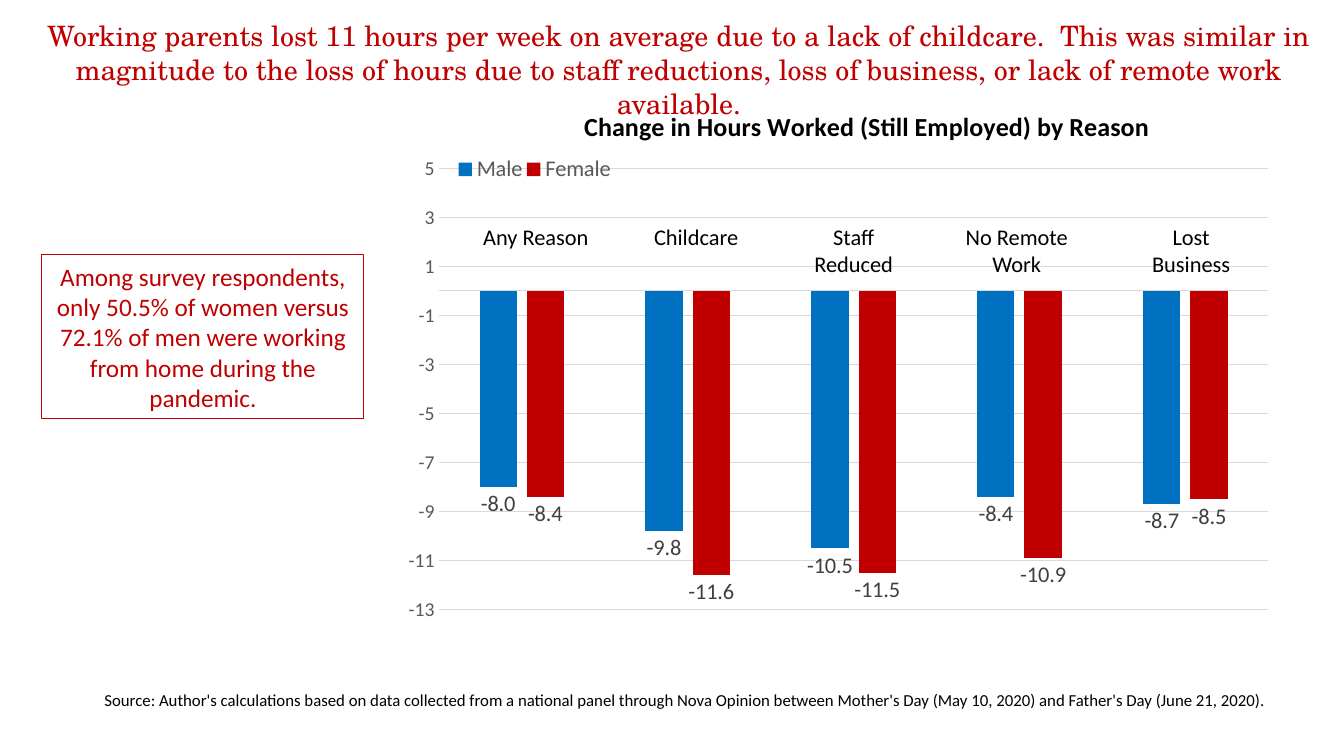
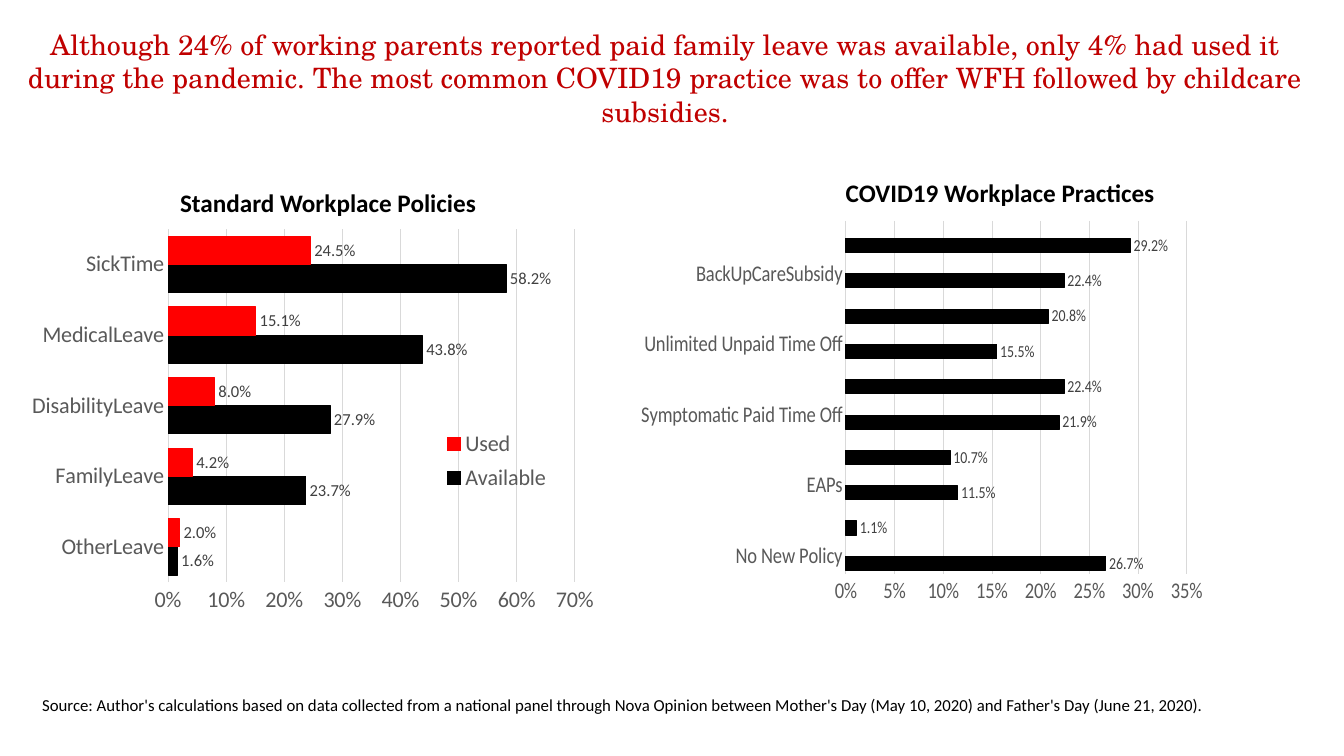
from lxml import etree
from pptx import Presentation
from pptx.chart.data import CategoryChartData
from pptx.dml.color import RGBColor
from pptx.enum.chart import XL_CHART_TYPE as CT, XL_LABEL_POSITION as LP
from pptx.enum.chart import XL_LEGEND_POSITION as LEG, XL_TICK_LABEL_POSITION as TL
from pptx.enum.chart import XL_TICK_MARK as TM
from pptx.enum.shapes import MSO_SHAPE
from pptx.enum.text import MSO_ANCHOR, MSO_AUTO_SIZE, PP_ALIGN
from pptx.oxml.ns import qn
from pptx.util import Pt

COLORS = {"accent": "C00000", "male": "0070C0", "used": "FF0000", "black": "000000",
          "axis": "595959", "label": "404040", "grid": "D9D9D9"}
BODY, HEAD = "Calibri", "TeX Gyre Schola"
SOURCE = ("Source: Author's calculations based on data collected from a national panel "
          "through Nova Opinion between Mother's Day (May 10, 2020) and Father's Day "
          "(June 21, 2020).")
BAR_PLOT = (0.237, 0.1, 0.734, 0.746)


def rgb(name):
    """Return the named colour."""
    return RGBColor.from_string(COLORS[name])


def style(font, size, color, face=BODY, bold=False):
    """Set size, colour, face and weight of a font."""
    font.size, font.name, font.bold = Pt(size), face, bold
    font.color.rgb = rgb(color)


def fill_text(tf, lines, size, color, face=BODY, bold=False, align=PP_ALIGN.CENTER):
    """Write one paragraph per line into a text frame."""
    for i, line in enumerate(lines):
        p = tf.paragraphs[0] if i == 0 else tf.add_paragraph()
        p.alignment = align
        r = p.add_run()
        r.text = line
        style(r.font, size, color, face, bold)


def add_text(s, box, lines, size, color="black", wrap=True, **kw):
    """Add a text box that grows with its text."""
    tf = s.shapes.add_textbox(*map(Pt, box)).text_frame
    tf.word_wrap = wrap
    tf.auto_size = MSO_AUTO_SIZE.SHAPE_TO_FIT_TEXT
    fill_text(tf, lines, size, color, **kw)


def add_frame(s, title_box, title, source_box):
    """Add the headline and the source note."""
    add_text(s, title_box, [title], 20, "accent", face=HEAD)
    add_text(s, source_box, [SOURCE], 12, align=PP_ALIGN.LEFT)


def add_callout(s, box, text):
    """Add an outlined box with centred text."""
    sp = s.shapes.add_shape(MSO_SHAPE.RECTANGLE, *map(Pt, box))
    sp.shadow.inherit = False
    sp.fill.background()
    sp.line.color.rgb, sp.line.width = rgb("accent"), Pt(0.75)
    sp.text_frame.word_wrap = True
    sp.text_frame.vertical_anchor = MSO_ANCHOR.MIDDLE
    fill_text(sp.text_frame, [text], 18, "accent")


def set_layout(el, box, inner=False):
    """Place a chart part by fractions of the chart area."""
    for old in el.findall(qn("c:layout")):
        el.remove(old)
    layout = etree.Element(qn("c:layout"))
    manual = etree.SubElement(layout, qn("c:manualLayout"))
    items = [("layoutTarget", "inner")] if inner else []
    items += [("xMode", "edge"), ("yMode", "edge"), *zip("xywh", box)]
    for tag, val in items:
        etree.SubElement(manual, qn(f"c:{tag}")).set("val", str(val))
    first = [c for c in el if c.tag in (qn("c:tx"), qn("c:legendPos"))]
    el.insert(el.index(first[0]) + 1 if first else 0, layout)


def style_axes(chart, cat_size, val_size, low, high, step, fmt):
    """Style both axes and the value gridlines."""
    cat, val = chart.category_axis, chart.value_axis
    for axis, size in ((cat, cat_size), (val, val_size)):
        axis.major_tick_mark = axis.minor_tick_mark = TM.NONE
        style(axis.tick_labels.font, size, "axis")
    val.minimum_scale, val.maximum_scale, val.major_unit = low, high, step
    val.tick_labels.number_format = fmt
    val.tick_labels.number_format_is_linked = False
    val.format.line.fill.background()
    val.has_major_gridlines = True
    for line in (cat.format.line, val.major_gridlines.format.line):
        line.color.rgb, line.width = rgb("grid"), Pt(0.75)


def style_series(ser, color, size, fmt, outlined):
    """Colour one series and show its values."""
    ser.invert_if_negative = False
    ser.format.fill.solid()
    ser.format.fill.fore_color.rgb = rgb(color)
    if outlined:
        ser.format.line.color.rgb, ser.format.line.width = rgb(color), Pt(0.75)
    labels = ser.data_labels
    labels.show_value, labels.position = True, LP.OUTSIDE_END
    labels.number_format, labels.number_format_is_linked = fmt, False
    style(labels.font, size, "label")


def add_bars(s, box, kind, cats, series, plot, gap, overlap, label, axes, legend=None):
    """Add a clustered chart; series holds name, colour and values."""
    data = CategoryChartData()
    data.categories = cats
    for name, _, vals in series:
        data.add_series(name, vals)
    chart = s.shapes.add_chart(kind, *map(Pt, box), data).chart
    style(chart.font, 10, "black")
    chart.has_title = False
    bars = chart.plots[0]
    bars.gap_width, bars.overlap, bars.vary_by_categories = gap, overlap, False
    for ser, (_, color, _) in zip(bars.series, series):
        style_series(ser, color, *label, outlined=kind == CT.BAR_CLUSTERED)
    style_axes(chart, *axes)
    set_layout(chart.plots[0]._element.getparent(), plot, inner=True)
    chart.has_legend = legend is not None
    if legend:
        chart.legend.position = LEG.BOTTOM
        chart.legend.include_in_layout = True
        style(chart.legend.font, 16, "axis")
        set_layout(chart.legend._element, legend)
    return chart


def add_policy_bars(s, box, title, title_at, cats, series, top, step, legend=None):
    """Add a percentage bar chart with its heading."""
    x, y, _, _ = box
    add_bars(s, box, CT.BAR_CLUSTERED, cats, series, BAR_PLOT, 50, 0, (12, "0.0%"),
             (16, 16, 0, top, step, "0%"), legend)
    add_text(s, (x + title_at[0], y + title_at[1], *title_at[2:]), [title], 18,
             wrap=False, bold=True, align=PP_ALIGN.LEFT)


def add_hours_chart(s, box):
    """Add the hours chart and the reason names above its columns."""
    x, y, w, _ = box
    reasons = [["Any Reason"], ["Childcare"], ["Staff", "Reduced"],
               ["No Remote", "Work"], ["Lost", "Business"]]
    series = [("Male", "male", (-8, -9.8, -10.5, -8.4, -8.7)),
              ("Female", "accent", (-8.4, -11.6, -11.5, -10.9, -8.5))]
    plot = (0.053, 0.148, 0.926, 0.738)
    chart = add_bars(s, box, CT.COLUMN_CLUSTERED, [""] * len(reasons), series, plot, 219,
                     -27, (16, "#,##0.0"), (12, 14, -13, 5, 2, "General"),
                     (0.07, 0.125, 0.18, 0.05))
    chart.category_axis.tick_label_position = TL.NONE
    chart.has_title = True
    fill_text(chart.chart_title.text_frame, ["Change in Hours Worked (Still Employed) by Reason"],
              18.6, "black", bold=True)
    set_layout(chart.chart_title._element, (0.21, 0.04))
    step, width = w * plot[2] / len(reasons), 90
    nudges = (10, 6, 0, -2, 4)
    for i, (lines, nudge) in enumerate(zip(reasons, nudges)):
        mid = x + w * plot[0] + step * (i + 0.5) + nudge
        add_text(s, (mid - width / 2, y + 99, width, 26), lines, 16, wrap=False)


def hours_slide(prs):
    """Build the slide on lost hours."""
    s = prs.slides.add_slide(prs.slide_layouts[6])
    add_frame(s, (9.5, 10, 951, 55),
              "Working parents lost 11 hours per week on average due to a lack of childcare.  "
              "This was similar in magnitude to the loss of hours due to staff reductions, "
              "loss of business, or lack of remote work available.", (67.5, 489, 920, 22))
    add_hours_chart(s, (279.5, 57, 640, 427))
    add_callout(s, (30, 182, 230, 117),
                "Among survey respondents, only 50.5% of women versus 72.1% of men were "
                "working from home during the pandemic.")


def policies_slide(prs):
    """Build the slide on workplace policies."""
    s = prs.slides.add_slide(prs.slide_layouts[6])
    add_frame(s, (11.5, 16, 927, 55),
              "Although 24% of working parents reported paid family leave was available, only "
              "4% had used it during the pandemic. The most common COVID19 practice was to "
              "offer WFH followed by childcare subsidies.", (23, 492.5, 920, 22))
    add_policy_bars(
        s, (23, 130, 401, 338), "Standard Workplace Policies", (98.5, 0, 228, 29),
        ["OtherLeave", "FamilyLeave", "DisabilityLeave", "MedicalLeave", "SickTime"],
        [("Available", "black", (0.016, 0.237, 0.279, 0.438, 0.582)),
         ("Used", "used", (0.02, 0.042, 0.08, 0.151, 0.245))],
        0.7, 0.1, (0.73, 0.51, 0.2, 0.16))
    named = ["No New Policy", "EAPs", "Symptomatic Paid Time Off",
             "Unlimited Unpaid Time Off", "BackUpCareSubsidy"]
    cats = [label for name in named for label in (name, "")]
    shares = (0.267, 0.011, 0.115, 0.107, 0.219, 0.224, 0.155, 0.208, 0.224, 0.292)
    add_policy_bars(
        s, (458, 124, 401, 338), "COVID19 Workplace Practices", (139, -1, 237, 29), cats,
        [("", "black", shares), ("", "black", [None] * len(cats))], 0.35, 0.05)


def main():
    """Build and save the presentation."""
    prs = Presentation()
    prs.slide_width, prs.slide_height = Pt(960), Pt(540)
    hours_slide(prs)
    policies_slide(prs)
    prs.save("out.pptx")


if __name__ == "__main__":
    main()
